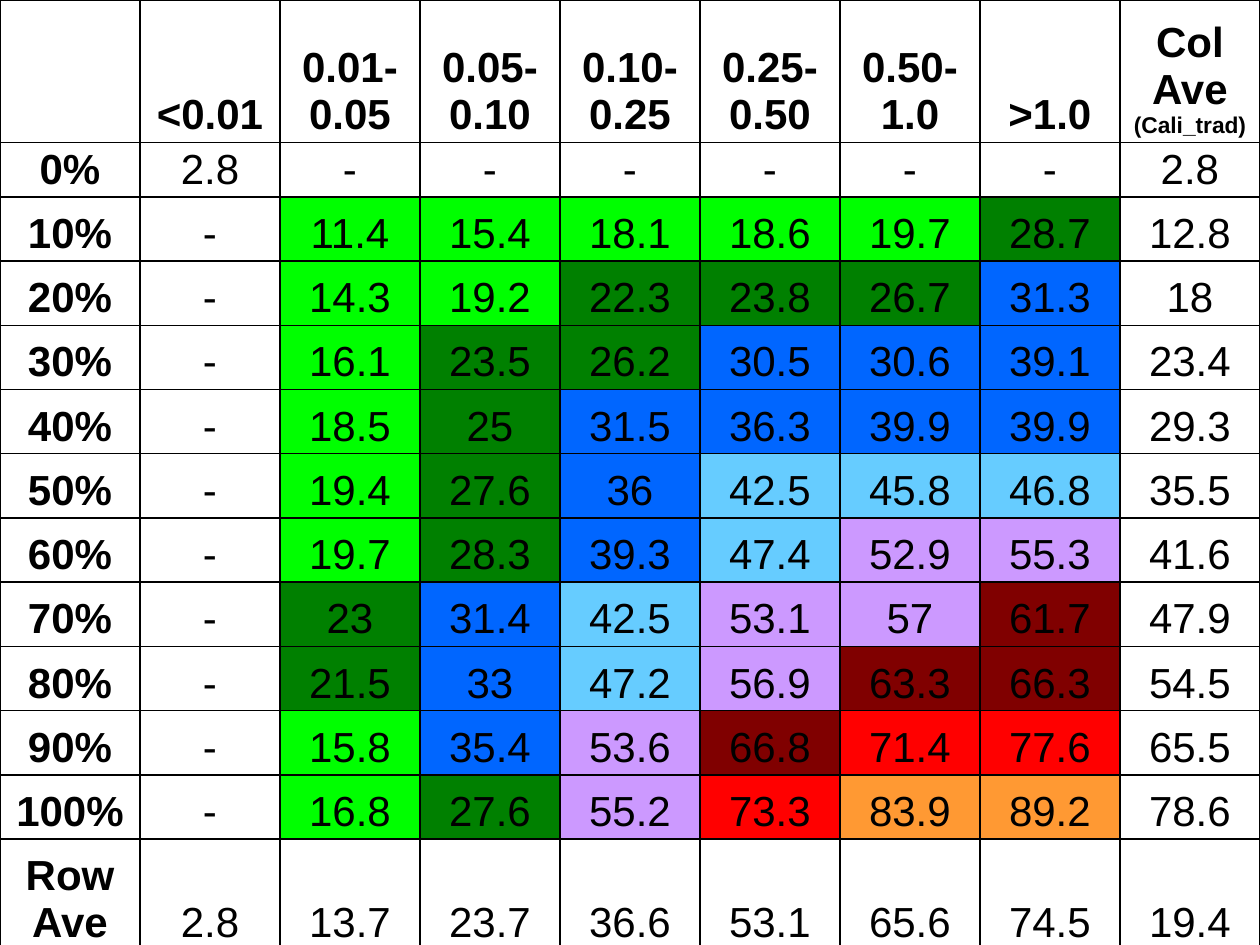
from lxml.etree import SubElement
from pptx import Presentation
from pptx.dml.color import RGBColor
from pptx.enum.text import MSO_ANCHOR, PP_ALIGN
from pptx.oxml.ns import qn
from pptx.util import Inches, Pt

COLORS = {
    "text": "000000", "border": "000000", "plain": "FFFFFF",
    "lime": "00FF00", "green": "008000", "blue": "0066FF", "sky": "66CCFF",
    "violet": "CC99FF", "maroon": "800000", "red": "FF0000", "orange": "FF9933",
}
# One colour per band of ten, starting at 10
BANDS = ["lime", "green", "blue", "sky", "violet", "maroon", "red", "orange"]

HEADER = ["", "<0.01", "0.01-0.05", "0.05-0.10", "0.10-0.25", "0.25-0.50",
          "0.50-1.0", ">1.0", "Col Ave "]
HEADER_NOTE = "(Cali_trad)"
BODY = """
0% 2.8 - - - - - - 2.8
10% - 11.4 15.4 18.1 18.6 19.7 28.7 12.8
20% - 14.3 19.2 22.3 23.8 26.7 31.3 18
30% - 16.1 23.5 26.2 30.5 30.6 39.1 23.4
40% - 18.5 25 31.5 36.3 39.9 39.9 29.3
50% - 19.4 27.6 36 42.5 45.8 46.8 35.5
60% - 19.7 28.3 39.3 47.4 52.9 55.3 41.6
70% - 23 31.4 42.5 53.1 57 61.7 47.9
80% - 21.5 33 47.2 56.9 63.3 66.3 54.5
90% - 15.8 35.4 53.6 66.8 71.4 77.6 65.5
100% - 16.8 27.6 55.2 73.3 83.9 89.2 78.6
"""
AVERAGES = ["Row Ave", "2.8", "13.7", "23.7", "36.6", "53.1", "65.6", "74.5", "19.4"]


class SlideBuilder:
    font = "Arial"
    size = 24
    note_size = 13
    border_width = 1

    def __init__(self, slide):
        self.slide = slide

    def table(self, left, top, width, heights, columns):
        frame = self.slide.shapes.add_table(
            len(heights), columns, Inches(left), Inches(top),
            Inches(width), Inches(sum(heights)))
        grid = frame.table
        grid.first_row = grid.horz_banding = False
        for column in grid.columns:
            column.width = Inches(width / columns)
        for row, height in zip(grid.rows, heights):
            row.height = Inches(height)
        return grid

    def borders(self, cell):
        properties = cell._tc.get_or_add_tcPr()
        for side in ("lnL", "lnR", "lnT", "lnB"):
            line = SubElement(properties, qn(f"a:{side}"), w=str(Pt(self.border_width)))
            fill = SubElement(line, qn("a:solidFill"))
            SubElement(fill, qn("a:srgbClr"), val=COLORS["border"])

    def style_run(self, run, size, bold):
        run.font.name = self.font
        run.font.size = Pt(size)
        run.font.bold = bold
        run.font.color.rgb = RGBColor.from_string(COLORS["text"])

    def cell(self, cell, text, fill, bold, note=""):
        self.borders(cell)
        cell.fill.solid()
        cell.fill.fore_color.rgb = RGBColor.from_string(COLORS[fill])
        cell.vertical_anchor = MSO_ANCHOR.BOTTOM
        cell.margin_left = cell.margin_right = Inches(0.08)
        cell.margin_top = cell.margin_bottom = Inches(0.03)
        cell.text_frame.text = text
        paragraph = cell.text_frame.paragraphs[0]
        paragraph.alignment = PP_ALIGN.CENTER
        for run in paragraph.runs:
            self.style_run(run, self.size, bold)
        if note:
            small = paragraph.add_run()
            small.text = note
            self.style_run(small, self.note_size, bold)


def band_color(value):
    if value == "-":
        return "plain"
    return BANDS[int(float(value) // 10) - 1]


def main():
    presentation = Presentation()
    presentation.slide_width = Inches(10)
    presentation.slide_height = Inches(7.5)
    builder = SlideBuilder(presentation.slides.add_slide(presentation.slide_layouts[6]))

    # Full-slide grid: header, 0% row, ten equal rows, averages
    rows = [HEADER, *(line.split() for line in BODY.strip().splitlines()), AVERAGES]
    heights = [1.13, 0.39] + [0.51] * 10 + [0.88]
    grid = builder.table(0, 0, 10, heights, len(HEADER))

    # Heat-map colours cover the 10% to 100% rows between the outer columns
    last_row, last_column = len(rows) - 1, len(HEADER) - 1
    for r, values in enumerate(rows):
        for c, value in enumerate(values):
            in_heat_map = 2 <= r < last_row and 2 <= c < last_column
            fill = band_color(value) if in_heat_map else "plain"
            note = HEADER_NOTE if (r, c) == (0, last_column) else ""
            builder.cell(grid.cell(r, c), value, fill, bold=r == 0 or c == 0, note=note)

    presentation.save("out.pptx")


if __name__ == "__main__":
    main()
